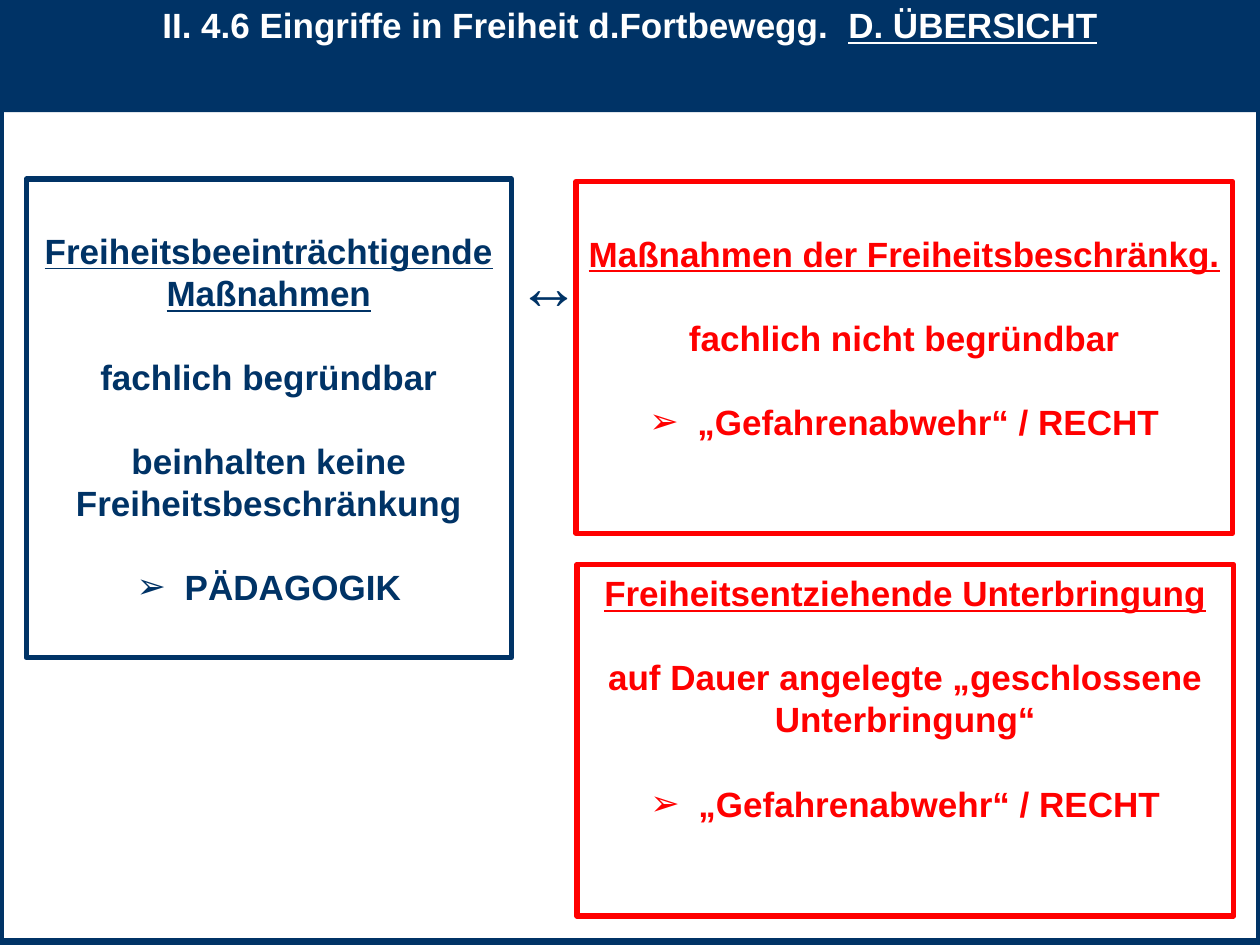
from lxml import etree
from pptx import Presentation
from pptx.dml.color import RGBColor
from pptx.enum.shapes import MSO_SHAPE
from pptx.enum.text import MSO_ANCHOR, MSO_AUTO_SIZE, PP_ALIGN
from pptx.oxml.ns import qn
from pptx.util import Cm, Pt

NAVY = RGBColor(0x00, 0x33, 0x66)
RED = RGBColor(0xFF, 0x00, 0x00)
WHITE = RGBColor(0xFF, 0xFF, 0xFF)

RECTANGLE = MSO_SHAPE.RECTANGLE
TOP = MSO_ANCHOR.TOP
CENTER = PP_ALIGN.CENTER
NO_AUTOFIT = MSO_AUTO_SIZE.NONE

LINE = Pt(24)
HANGING = Cm(0.97)
TITLE_ONLY = 5

# Panels: position in cm, inset above the text, colour, and paragraphs
# given as (text, style, blank-line gap before)
PANELS = [
    ((0.53, 3.61, 9.78, 9.65), 1.02, NAVY, [
        ("Freiheitsbeeinträchtigende Maßnahmen", "heading", False),
        ("fachlich begründbar", "plain", True),
        ("beinhalten keine Freiheitsbeschränkung", "plain", True),
        ("PÄDAGOGIK", "bullet", True),
    ]),
    ((11.61, 3.66, 13.24, 7.09), 1.02, RED, [
        ("Maßnahmen der Freiheitsbeschränkg.", "heading", False),
        ("fachlich nicht begründbar", "plain", True),
        ("„Gefahrenabwehr“ / RECHT", "bullet", True),
    ]),
    ((11.63, 11.38, 13.24, 7.09), 0.15, RED, [
        ("Freiheitsentziehende Unterbringung", "heading", False),
        ("auf Dauer angelegte „geschlossene Unterbringung“", "plain", True),
        ("„Gefahrenabwehr“ / RECHT", "bullet", True),
    ]),
]


def set_all(target, values):
    for name, value in values.items():
        setattr(target, name, value)


def add_span(para, text, color, size=20, underline=False):
    span = para.add_run()
    span.text = text
    set_all(span.font, {"name": "Arial", "size": Pt(size), "bold": True,
                        "underline": underline})
    span.font.color.rgb = color


def set_bullet(para):
    properties = para._p.get_or_add_pPr()
    properties.set("marL", str(HANGING))
    properties.set("indent", str(-HANGING))
    etree.SubElement(properties, qn("a:buFont")).set("typeface", "Arial")
    etree.SubElement(properties, qn("a:buChar")).set("char", "➢")


def set_frame(box, inset_top=0.13, inset_side=0.25):
    frame = box.text_frame
    set_all(frame, {"word_wrap": True, "auto_size": NO_AUTOFIT,
                    "vertical_anchor": TOP,
                    "margin_top": Cm(inset_top), "margin_bottom": Cm(0),
                    "margin_left": Cm(inset_side),
                    "margin_right": Cm(inset_side)})
    return frame


def add_outline(page, place, color, width):
    box = page.shapes.add_shape(RECTANGLE, *map(Cm, place))
    box.shadow.inherit = False
    box.fill.background()
    box.line.color.rgb = color
    box.line.width = Pt(width)
    return box


def add_panel(page, place, inset_top, color, content):
    frame = set_frame(add_outline(page, place, color, 3), inset_top)
    for index, (text, style, gap) in enumerate(content):
        para = frame.add_paragraph() if index else frame.paragraphs[0]
        set_all(para, {"alignment": CENTER, "line_spacing": LINE,
                       "space_before": LINE if gap else Pt(0)})
        if style == "bullet":
            set_bullet(para)
        add_span(para, text, color, underline=style == "heading")


def add_title(page):
    title = page.shapes.title
    set_all(title, {"left": Cm(-0.05), "top": Cm(-0.05),
                    "width": Cm(25.5), "height": Cm(2.31)})
    title.fill.solid()
    title.fill.fore_color.rgb = NAVY
    para = set_frame(title).paragraphs[0]
    set_all(para, {"alignment": CENTER, "line_spacing": LINE,
                   "space_before": Pt(0)})
    add_span(para, "II. 4.6 Eingriffe in Freiheit d.Fortbewegg.  ", WHITE)
    add_span(para, "D. ÜBERSICHT", WHITE, underline=True)


def add_symbol(page, text, place):
    box = page.shapes.add_textbox(*map(Cm, place))
    para = set_frame(box, 0, 0).paragraphs[0]
    para.alignment = CENTER
    add_span(para, text, NAVY, size=36)


def main():
    deck = Presentation()
    deck.slide_width, deck.slide_height = Cm(25.4), Cm(19.05)
    page = deck.slides.add_slide(deck.slide_layouts[TITLE_ONLY])

    # Page border and title bar
    add_outline(page, (0, 0, 25.4, 19), NAVY, 5)
    add_title(page)

    # Contrast between the left and right panels
    add_symbol(page, "↔", (10.32, 4.98, 1.5, 1.6))
    for panel in PANELS:
        add_panel(page, *panel)

    deck.save("out.pptx")


if __name__ == "__main__":
    main()
